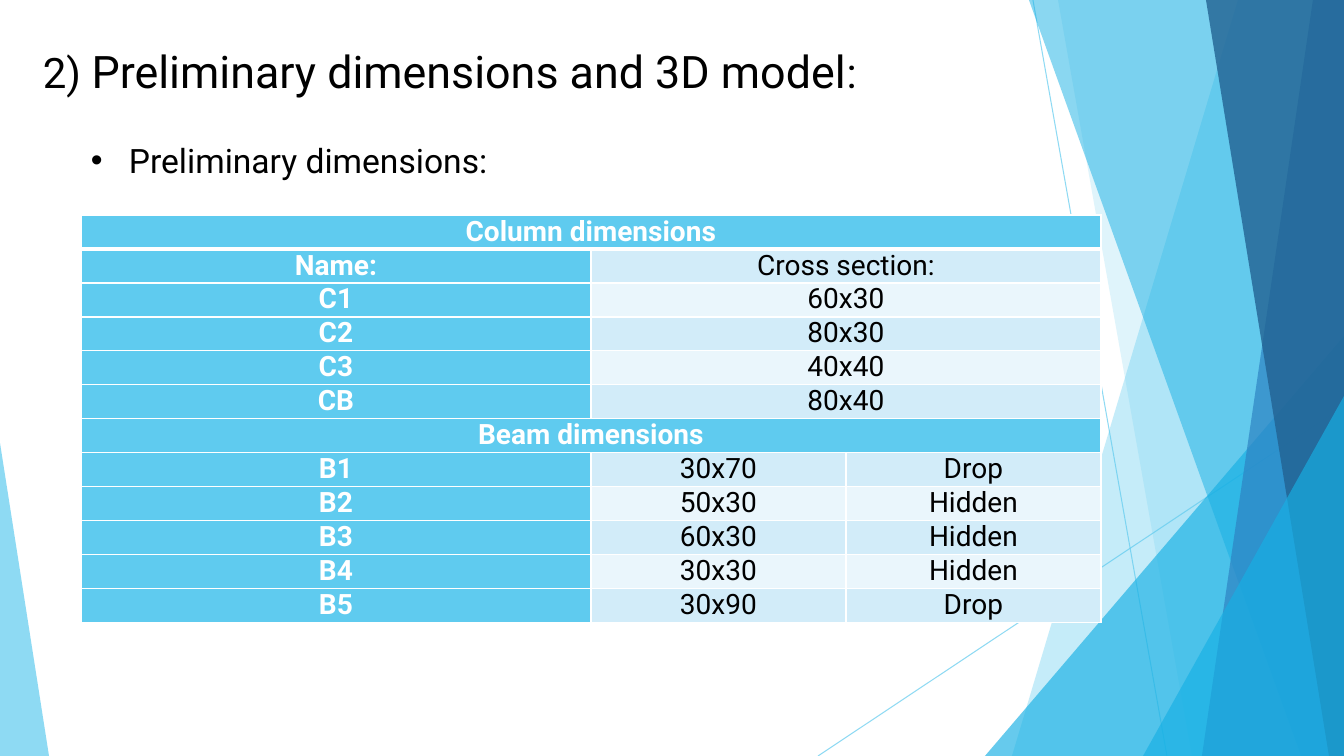
from lxml import etree
from pptx import Presentation, util as u
from pptx.dml.color import RGBColor
from pptx.enum import shapes, text
from pptx.oxml.ns import qn

PX = 914400 / 100.8
WIDTH, HEIGHT = 1344, 756
FONT = "Roboto"

BLACK = RGBColor(0x00, 0x00, 0x00)
WHITE = RGBColor(0xFF, 0xFF, 0xFF)
SKY = RGBColor(0x5F, 0xCB, 0xEF)
CYAN = RGBColor(0x17, 0xB0, 0xE4)
BLUE = RGBColor(0x2E, 0x83, 0xC3)
NAVY = RGBColor(0x22, 0x62, 0x92)
BAND_DARK = RGBColor(0xD2, 0xEC, 0xF9)
BAND_LIGHT = RGBColor(0xEA, 0xF6, 0xFC)

TITLE = [("2) ", 30), ("Preliminary dimensions and 3D model", 32), (":", 30)]
SUBTITLE = [("Preliminary dimensions:", 24)]

COLUMN_WIDTHS = [510, 255, 255]
ROW_HEIGHT = 34
# A row with fewer than three values stretches its last value to the right edge.
ROWS = [
    ["Column dimensions"],
    ["Name:", "Cross section:"],
    ["C1", "60x30"],
    ["C2", "80x30"],
    ["C3", "40x40"],
    ["CB", "80x40"],
    ["Beam dimensions"],
    ["B1", "30x70", "Drop"],
    ["B2", "50x30", "Hidden"],
    ["B3", "60x30", "Hidden"],
    ["B4", "30x30", "Hidden"],
    ["B5", "30x90", "Drop"],
]

RAYS = [(1033, 0, 1167, 756), (1344, 406, 818, 756)]
# Band: x at the top, x at the bottom; it fills the slide from there rightwards.
# Triangle: left, top, place of the apex; it stands on the bottom edge.
SHARDS = [
    ("band", (1238, 1012), SKY, 36),
    ("band", (1058, 1192), SKY, 20),
    ("triangle", (985, 336, 359, 1), CYAN, 66),
    ("band", (1029, 1301), CYAN, 50),
    ("band", (1313, 1202), BLUE, 70),
    ("band", (1206, 1329), NAVY, 80),
    ("triangle", (1143, 396, 201, 1), CYAN, 66),
    ("triangle", (0, 443, 49, 0), SKY, 70),
]


def px(*lengths):
    return [u.Emu(round(n * PX)) for n in lengths]


def set_alpha(parent, percent):
    color = next(parent.iter(qn("a:srgbClr")))
    etree.SubElement(color, qn("a:alpha"), val=str(percent * 1000))


def add_ray(slide, ends):
    line = slide.shapes.add_connector(shapes.MSO_CONNECTOR.STRAIGHT, *px(*ends))
    line.line.color.rgb = SKY
    line.line.width = u.Pt(0.75)
    sp_pr = line._element.spPr
    set_alpha(sp_pr, 70)
    etree.SubElement(sp_pr, qn("a:effectLst"))


def add_shard(slide, kind, geometry, color, alpha):
    if kind == "band":
        top_x, bottom_x = geometry
        builder = slide.shapes.build_freeform(top_x, 0, scale=PX)
        builder.add_line_segments([(WIDTH, 0), (WIDTH, HEIGHT), (bottom_x, HEIGHT)])
        sp = builder.convert_to_shape()
    else:
        left, top, width, apex = geometry
        sp = slide.shapes.add_shape(shapes.MSO_SHAPE.ISOSCELES_TRIANGLE,
                                    *px(left, top, width, HEIGHT - top))
        sp.adjustments[0] = apex
    sp.shadow.inherit = False
    sp.line.fill.background()
    sp.fill.solid()
    sp.fill.fore_color.rgb = color
    set_alpha(sp._element.spPr, alpha)


def add_run(p, words, *, size, color=BLACK, bold=False):
    r = p.add_run()
    r.text = words
    r.font.name = FONT
    r.font.size = u.Pt(size)
    r.font.color.rgb = color
    r.font.bold = bold


def add_text(slide, box, runs, bullet_indent=0):
    tf = slide.shapes.add_textbox(*px(*box)).text_frame
    tf.word_wrap = True
    tf.auto_size = text.MSO_AUTO_SIZE.SHAPE_TO_FIT_TEXT
    p = tf.paragraphs[0]
    if bullet_indent:
        indent = px(bullet_indent)[0]
        p_pr = p._p.get_or_add_pPr()
        p_pr.set("marL", str(indent))
        p_pr.set("indent", str(-indent))
        etree.SubElement(p_pr, qn("a:buFont"), typeface="Arial")
        etree.SubElement(p_pr, qn("a:buChar"), char="•")
    for words, size in runs:
        add_run(p, words, size=size)


def set_borders(cell, **widths):
    """Draw white borders of 1 pt, or of the width given for a side (L, R, T, B)."""
    tc_pr = cell._tc.get_or_add_tcPr()
    for place, side in enumerate("LRTB"):
        ln = etree.Element(qn(f"a:ln{side}"), w=str(u.Pt(widths.get(side, 1))))
        fill = etree.SubElement(ln, qn("a:solidFill"))
        etree.SubElement(fill, qn("a:srgbClr"), val=str(WHITE))
        tc_pr.insert(place, ln)


def add_dimensions_table(slide):
    last = len(COLUMN_WIDTHS) - 1
    box = px(81, 215, sum(COLUMN_WIDTHS), ROW_HEIGHT * len(ROWS))
    table = slide.shapes.add_table(len(ROWS), last + 1, *box).table
    for column, width in zip(table.columns, px(*COLUMN_WIDTHS)):
        column.width = width
    for i, values in enumerate(ROWS):
        table.rows[i].height = px(ROW_HEIGHT)[0]
        band = BAND_DARK if i % 2 else BAND_LIGHT
        for j in range(last + 1):
            cell = table.cell(i, j)
            heading = j == 0 or len(values) == 1
            cell.fill.solid()
            cell.fill.fore_color.rgb = SKY if heading else band
            set_borders(cell, **{0: {"B": 3}, 1: {"T": 3}}.get(i, {}))
            cell.margin_left, cell.margin_right = px(7, 7)
            cell.margin_top = cell.margin_bottom = 0
            if j < len(values):
                p = cell.text_frame.paragraphs[0]
                p.alignment = text.PP_ALIGN.CENTER
                add_run(p, values[j], size=20, bold=heading,
                        color=WHITE if heading else BLACK)
        if len(values) <= last:
            table.cell(i, len(values) - 1).merge(table.cell(i, last))


def main():
    prs = Presentation()
    prs.slide_width, prs.slide_height = px(WIDTH, HEIGHT)
    slide = prs.slides.add_slide(prs.slide_layouts[6])
    for ends in RAYS:
        add_ray(slide, ends)
    for shard in SHARDS:
        add_shard(slide, *shard)
    add_text(slide, (33, 39, 853, 64), TITLE)
    add_text(slide, (81, 135, 471, 50), SUBTITLE, bullet_indent=38)
    add_dimensions_table(slide)
    prs.save("out.pptx")


if __name__ == "__main__":
    main()
